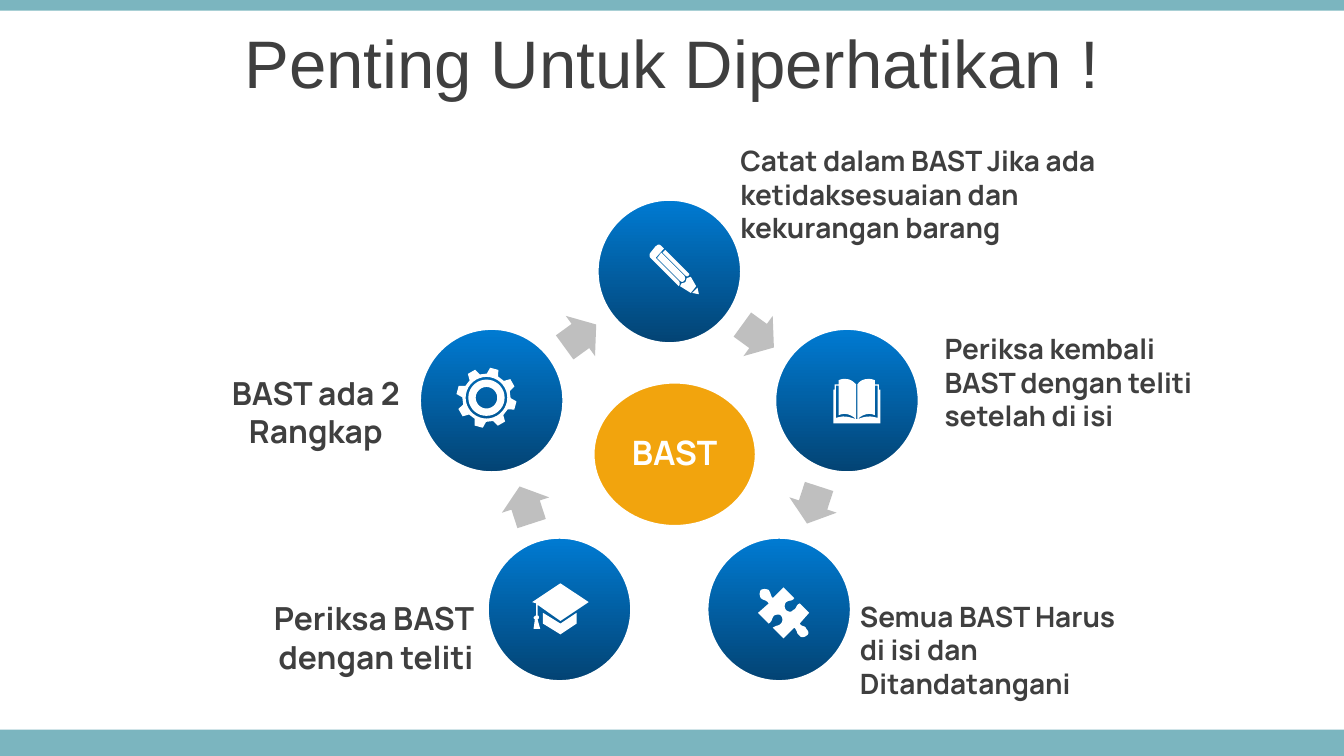
from math import cos, radians, sin

from lxml.etree import SubElement
from pptx import Presentation
from pptx.dml.color import RGBColor
from pptx.enum.shapes import MSO_SHAPE
from pptx.enum.text import MSO_ANCHOR, PP_ALIGN
from pptx.oxml.ns import qn
from pptx.util import Pt

PX = 9144  # 100 px to the inch
WHITE, DARK, GREY = "FFFFFF", "3F3F3F", "BFBFBF"
BAR, ORANGE = "65A9B4", "F2A40D"
BLUE_TOP, BLUE_BOTTOM = "007BD3", "034373"

CENTER_X, CENTER_Y, RING_RADIUS = 498, 341, 139
CIRCLE = 108

# Contours: a pair is a straight line, six numbers are a Bezier curve.
PENCIL = [
    [(519, 214), (515, 218), (520, 219)],
    [(514, 206), (511, 207), (510, 210), (507, 211), (506, 213), (514, 218), (518, 213)],
    [(488, 192), (486, 194), (505, 213), (506, 212, 506, 210, 505, 209)],
    [(492, 188), (489, 192), (506, 209), (507, 210, 508, 210, 509, 209),
     (510, 208, 510, 206, 509, 205)],
    [(495, 186), (493, 188), (510, 205), (511, 206, 512, 206, 513, 204)],
    [(490, 182), (489, 182, 489, 183, 488, 183), (484, 188), (483, 189, 483, 191, 484, 192),
     (486, 194), (494, 185), (492, 183), (492, 183, 491, 182, 490, 182)],
]
BOOK = [
    [(638, 312), (637, 312), (631, 310, 628, 309, 622, 311), (622, 287), (624, 287),
     (624, 309), (628, 307, 633, 308, 637, 312), (637, 286), (634, 283, 632, 282, 629, 282),
     (627, 282, 626, 282, 624, 283), (624, 286), (621, 286), (621, 290), (620, 290),
     (620, 315), (655, 315), (655, 290), (654, 290), (654, 286), (651, 286), (651, 283),
     (649, 282, 647, 282, 646, 282), (643, 282, 640, 283, 638, 286), (638, 312),
     (642, 308, 647, 307, 651, 309), (651, 287), (653, 287), (653, 311),
     (647, 309, 643, 310, 638, 312)],
]
PUZZLE = [
    [(566, 439), (565, 441, 565, 443, 566, 445), (568, 447, 570, 446, 572, 449),
     (564, 456), (572, 464), (575, 462, 574, 460, 576, 458), (578, 457, 580, 457, 581, 458),
     (582, 459, 583, 462, 581, 464), (579, 466, 578, 465, 575, 467), (583, 475),
     (591, 467), (594, 470, 592, 471, 595, 473), (596, 475, 599, 474, 600, 473),
     (602, 472, 602, 470, 600, 468), (599, 465, 597, 467, 595, 464), (602, 456),
     (595, 449), (592, 450, 593, 453, 590, 454), (589, 456, 586, 455, 585, 454),
     (584, 453, 583, 450, 585, 448), (588, 446, 589, 448, 591, 445), (583, 437),
     (575, 445), (573, 443, 574, 442, 572, 439), (570, 438, 568, 438, 566, 439)],
]
CAP = [
    [(429, 456), (417, 464), (404, 456), (404, 464), (417, 472), (429, 464)],
    [(417, 434), (396, 448), (399, 449), (399, 458), (398, 458, 397, 459, 397, 460),
     (398, 461), (397, 468), (402, 468), (400, 461), (401, 460),
     (401, 459, 401, 458, 400, 458), (400, 450), (417, 462), (438, 448)],
]

LABELS = [  # left, top, width, height, text, size, alignment
    (541, 102, 341, 86, "Catat dalam BAST Jika ada ketidaksesuaian dan kekurangan barang",
     15, PP_ALIGN.LEFT),
    (693, 242, 214, 86, "Periksa kembali BAST dengan teliti setelah di isi", 15, PP_ALIGN.LEFT),
    (630, 441, 223, 86, "Semua BAST Harus di isi dan Ditandatangani", 15, PP_ALIGN.LEFT),
    (168, 441, 194, 67, "Periksa BAST dengan teliti", 17, PP_ALIGN.RIGHT),
    (155, 273, 160, 67, "BAST ada 2 Rangkap", 17, PP_ALIGN.CENTER),
]


def px(*lengths):
    return [round(n * PX) for n in lengths]


def rgb(color):
    return RGBColor.from_string(color)


def polar(x, y, radius, angle):
    """Point at an angle in degrees, clockwise from the right."""
    a = radians(angle)
    return x + radius * cos(a), y + radius * sin(a)


def add_shape(slide, kind, box, color, outlined=False):
    sp = slide.shapes.add_shape(kind, *px(*box))
    sp.shadow.inherit = False
    sp.fill.solid()
    sp.fill.fore_color.rgb = rgb(color)
    if outlined:
        sp.line.color.rgb = rgb(WHITE)
        sp.line.width = Pt(2)
    else:
        sp.line.fill.background()
    return sp


def add_bar(slide, top, height):
    sp = add_shape(slide, MSO_SHAPE.RECTANGLE, (0, top, 1000, height), BAR)
    color = sp.fill._xPr.find(qn("a:solidFill"))[0]
    SubElement(color, qn("a:alpha"), val="85000")


def add_step_circle(slide, x, y):
    box = (x - CIRCLE / 2, y - CIRCLE / 2, CIRCLE, CIRCLE)
    sp = add_shape(slide, MSO_SHAPE.OVAL, box, BLUE_TOP, outlined=True)
    sp.fill.gradient()
    sp.fill.gradient_angle = 270
    for stop, color in zip(sp.fill.gradient_stops, (BLUE_TOP, BLUE_BOTTOM)):
        stop.color.rgb = rgb(color)


def add_arrow(slide, x, y, angle):
    sp = add_shape(slide, MSO_SHAPE.RIGHT_ARROW, (x - 14.5, y - 18.5, 29, 37), GREY)
    sp.adjustments[0] = 0.6
    sp.adjustments[1] = 0.5
    sp.rotation = angle


def flatten(contour, steps=6):
    """Turn the curves of a contour into short lines."""
    points = []
    for seg in contour:
        if len(seg) == 2:
            points.append(seg)
            continue
        ends = [points[-1], seg[:2], seg[2:4], seg[4:]]
        for i in range(1, steps + 1):
            t = i / steps
            weights = ((1 - t) ** 3, 3 * t * (1 - t) ** 2, 3 * t * t * (1 - t), t ** 3)
            points.append(tuple(sum(w * p[k] for w, p in zip(weights, ends)) for k in (0, 1)))
    return points


def gear(x=362, y=296):
    teeth = [polar(x, y, radius, 15 + 45 * k + turn)
             for k in range(8)
             for radius, turn in ((18, -14), (22.5, -8), (22.5, 8), (18, 14))]
    rings = [[polar(x, y, radius, a) for a in range(0, 360, 10)] for radius in (15.5, 13.5, 8)]
    return [teeth, *rings]


def add_icon(slide, contours):
    builder = None
    for contour in contours:
        first, *rest = [px(*point) for point in flatten(contour)]
        if builder is None:
            builder = slide.shapes.build_freeform(*first)
        else:
            builder.move_to(*first)
        builder.add_line_segments(rest, close=True)
    sp = builder.convert_to_shape()
    sp.shadow.inherit = False
    sp.fill.solid()
    sp.fill.fore_color.rgb = rgb(WHITE)
    sp.line.fill.background()


def write(sp, text, size, color, align, font="Manrope", bold=True):
    tf = sp.text_frame
    tf.word_wrap = True
    p = tf.paragraphs[0]
    p.text = text
    p.alignment = align
    p.font.name, p.font.size, p.font.bold = font, Pt(size), bold
    p.font.color.rgb = rgb(color)
    return tf


def add_title(slide, text):
    title = slide.shapes.title
    title.left, title.top, title.width, title.height = px(0, 14, 1000, 63)
    tf = write(title, text, 36, DARK, PP_ALIGN.CENTER, "Arial", False)
    tf.vertical_anchor = MSO_ANCHOR.MIDDLE


def add_hub(slide, text):
    sp = add_shape(slide, MSO_SHAPE.OVAL, (441, 284, 122, 108), ORANGE, outlined=True)
    tf = write(sp, text, 18, WHITE, PP_ALIGN.CENTER)
    tf.vertical_anchor = MSO_ANCHOR.MIDDLE
    tf.margin_left = tf.margin_right = tf.margin_top = tf.margin_bottom = px(6)[0]
    tf.paragraphs[0].line_spacing = 0.9


def main():
    prs = Presentation()
    prs.slide_width, prs.slide_height = px(1000, 562.5)
    slide = prs.slides.add_slide(prs.slide_layouts[5])
    add_bar(slide, 543, 20)
    add_bar(slide, 0, 8)
    add_title(slide, "Penting Untuk Diperhatikan !")

    centers = [polar(CENTER_X, CENTER_Y, RING_RADIUS, 72 * i - 90) for i in range(5)]
    for x, y in centers:
        add_step_circle(slide, x, y)
    for i in (0, 1, 3, 4):
        (x1, y1), (x2, y2) = centers[i], centers[(i + 1) % 5]
        add_arrow(slide, (x1 + x2) / 2, (y1 + y2) / 2, 36 + 72 * i)
    add_hub(slide, "BAST")

    for icon in (PENCIL, BOOK, PUZZLE, CAP, gear()):
        add_icon(slide, icon)
    for *box, text, size, align in LABELS:
        write(slide.shapes.add_textbox(*px(*box)), text, size, DARK, align)
    prs.save("out.pptx")


if __name__ == "__main__":
    main()
